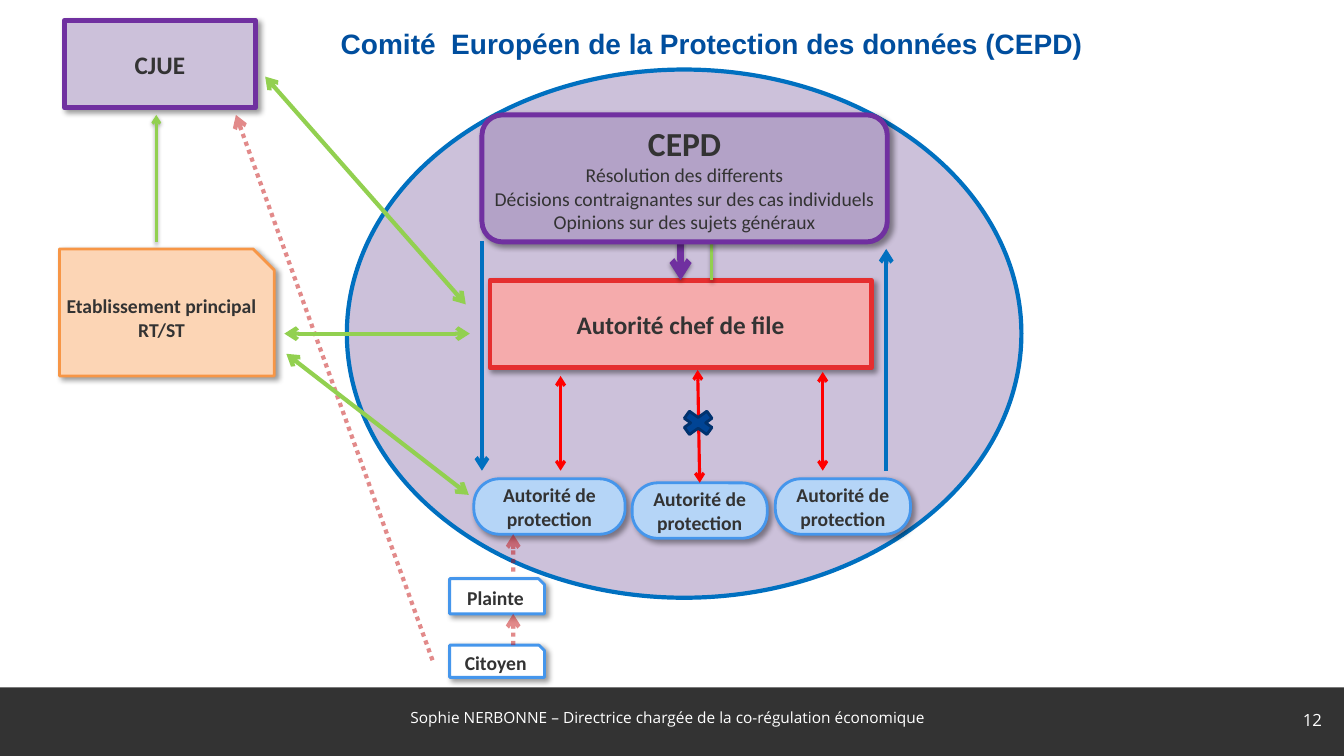
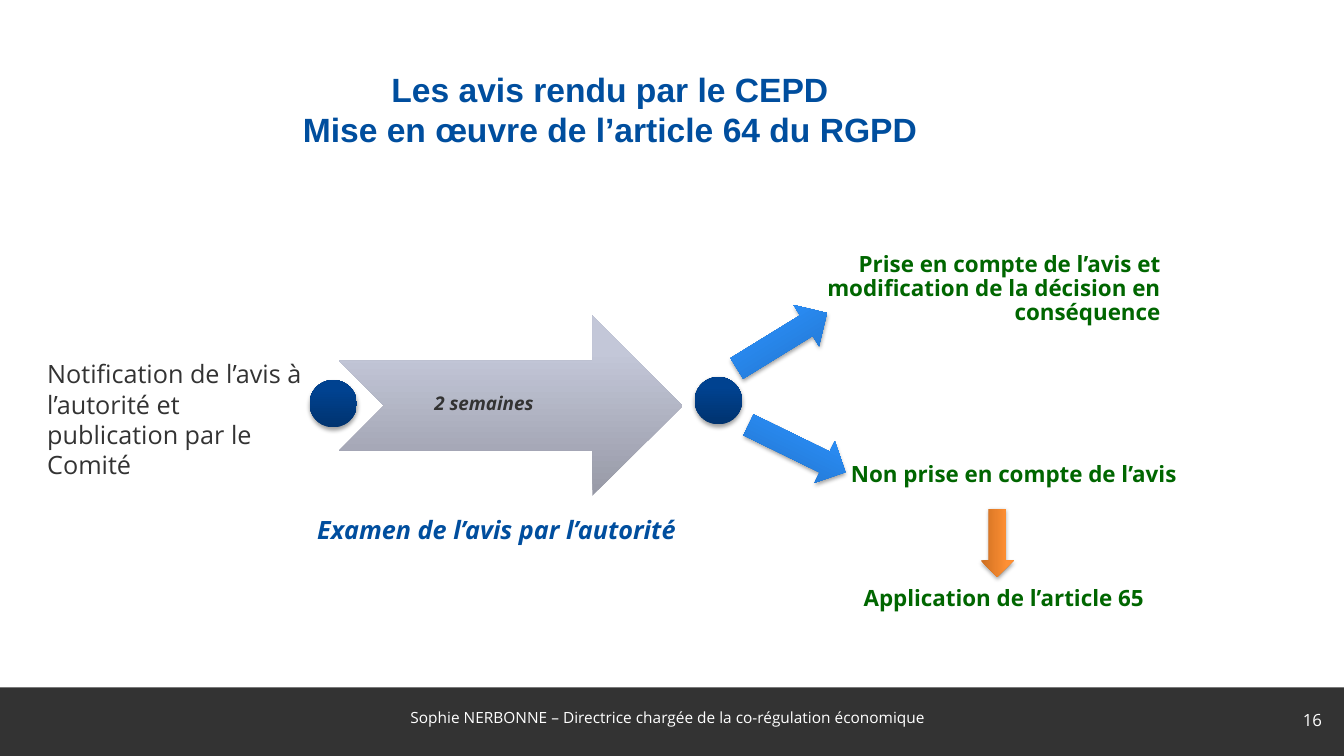
from lxml import etree
from pptx import Presentation
from pptx.dml.color import RGBColor
from pptx.enum.dml import MSO_LINE
from pptx.enum.shapes import MSO_CONNECTOR, MSO_SHAPE
from pptx.enum.text import MSO_ANCHOR, MSO_AUTO_SIZE, PP_ALIGN
from pptx.oxml.ns import qn
from pptx.util import Emu, Pt

PX = 9144  # one hundred px to the inch
LEFT, CENTER, RIGHT = PP_ALIGN.LEFT, PP_ALIGN.CENTER, PP_ALIGN.RIGHT
TOP, MIDDLE, BOTTOM = MSO_ANCHOR.TOP, MSO_ANCHOR.MIDDLE, MSO_ANCHOR.BOTTOM
RECTANGLE, ROUNDED = MSO_SHAPE.RECTANGLE, MSO_SHAPE.ROUNDED_RECTANGLE
SNIPPED, OVAL = MSO_SHAPE.SNIP_1_RECTANGLE, MSO_SHAPE.OVAL
CROSS = MSO_SHAPE.MATH_MULTIPLY
ARROW, NOTCHED_ARROW = MSO_SHAPE.RIGHT_ARROW, MSO_SHAPE.NOTCHED_RIGHT_ARROW
STRAIGHT, DOTS, NO_FIT = MSO_CONNECTOR.STRAIGHT, MSO_LINE.ROUND_DOT, MSO_AUTO_SIZE.NONE
TOP_SIDE = 0

COLORS = {
    "white": "FFFFFF", "dark": "333333", "title": "004E9E", "answer": "006600",
    "lilac": "CCC1DA", "mauve": "B3A2C7", "purple": "7030A0",
    "blue": "0070C0", "sky": "B5D5F7", "sky_line": "4596EC",
    "pink": "F5ABAC", "crimson": "E52E2F", "red": "FF0000", "brick": "C00000",
    "peach": "FCD5B5", "orange": "F79646", "green": "92D050",
    "navy": "004495", "navy_line": "00326E", "black": "000000",
}
GRADIENTS = {
    "grey": ("9799A6", "C3C7D8"), "navy": ("00336F", "004290"),
    "blue": ("216FC3", "2B91FD"), "orange": ("CC6E20", "FF9034"),
}
# opacity %, blur pt, distance pt, angle
BOX_SHADOW = (40, 4, 3, 45)
SOFT_SHADOW = (36, 3.1, 1.7, 90)

TITLE = {"name": "Arial", "size": 24, "bold": True, "color": "title"}
BOX = {"name": "Calibri", "size": 14, "bold": True, "color": "dark"}
BOX_LARGE = {**BOX, "size": 18}
BOX_HEAD = {**BOX, "size": 24}
BOX_DETAIL = {**BOX, "bold": False}
PLAIN = {"name": "Open Sans", "size": 18, "color": "dark"}
STEP = {**PLAIN, "bold": True, "italic": True, "color": "title"}
DURATION = {**STEP, "size": 13.5, "color": "dark"}
ANSWER = {**PLAIN, "size": 16, "bold": True, "color": "answer"}
FOOTER = {**PLAIN, "size": 11, "color": "white"}
NUMBER = {**FOOTER, "size": 12}

FOOTER_TEXT = "Sophie NERBONNE – Directrice chargée de la co-régulation économique"


def px(*values):
    return [Emu(value * PX) for value in values]


def rgb(name):
    return RGBColor.from_string(COLORS[name])


def set_font(font, style):
    for key, value in style.items():
        if key == "color":
            font.color.rgb = rgb(value)
        else:
            setattr(font, key, Pt(value) if key == "size" else value)


def write_text(shape, lines, align=CENTER, anchor=MIDDLE, inset=(10, 5), spacing=None):
    """Fill a shape with (text, style) pairs, one paragraph each."""
    frame = shape.text_frame
    horizontal, vertical = px(*inset)
    settings = {
        "word_wrap": True, "auto_size": NO_FIT, "vertical_anchor": anchor,
        "margin_left": horizontal, "margin_right": horizontal,
        "margin_top": vertical, "margin_bottom": vertical,
    }
    for key, value in settings.items():
        setattr(frame, key, value)
    for index, (text, style) in enumerate(lines):
        paragraph = frame.add_paragraph() if index else frame.paragraphs[0]
        paragraph.text = text
        paragraph.alignment = align
        paragraph.line_spacing = spacing
        for run in paragraph.runs:
            set_font(run.font, style)


def set_shadow(shape, shadow=None):
    """Replace the theme's shadow by the given one, or by none."""
    effects = etree.SubElement(shape.element.find(qn("p:spPr")), qn("a:effectLst"))
    if shadow:
        opacity, blur, distance, angle = shadow
        outer = etree.SubElement(
            effects, qn("a:outerShdw"), blurRad=str(int(Pt(blur))),
            dist=str(int(Pt(distance))), dir=str(angle * 60000), algn="ctr",
            rotWithShape="0")
        color = etree.SubElement(outer, qn("a:srgbClr"), val=COLORS["black"])
        etree.SubElement(color, qn("a:alpha"), val=str(opacity * 1000))


def add_block(slide, preset, box, fill, line=None, shadow=None, adjust=None):
    """Add a flat shape; line is (colour, points)."""
    shape = slide.shapes.add_shape(preset, *px(*box))
    if adjust is not None:
        shape.adjustments[0] = adjust
    shape.fill.solid()
    shape.fill.fore_color.rgb = rgb(fill)
    if line:
        color, width = line
        shape.line.color.rgb = rgb(color)
        shape.line.width = Pt(width)
    else:
        shape.line.fill.background()
    set_shadow(shape, shadow)
    return shape


def add_gradient(slide, preset, box, gradient, rotation=0, shadow=SOFT_SHADOW):
    shape = slide.shapes.add_shape(preset, *px(*box))
    shape.rotation = rotation
    shape.fill.gradient()
    shape.fill.gradient_angle = 90
    stops = zip(shape.fill.gradient_stops, GRADIENTS[gradient], (0, 0.8))
    for stop, color, position in stops:
        stop.color.rgb = RGBColor.from_string(color)
        stop.position = position
    shape.line.fill.background()
    set_shadow(shape, shadow)


def add_label(slide, box, text, style, **layout):
    write_text(slide.shapes.add_textbox(*px(*box)), [(text, style)], **layout)


def add_arrow(slide, ends, color, width, double=False, dotted=False, shadow=None,
              target=None):
    """Draw an arrow; with a target it is joined to the top of that shape."""
    connector = slide.shapes.add_connector(STRAIGHT, *px(*ends))
    if target is not None:
        connector.end_connect(target, TOP_SIDE)
    connector.line.color.rgb = rgb(color)
    connector.line.width = Pt(width)
    line = connector.element.find(".//" + qn("a:ln"))
    if dotted:
        connector.line.dash_style = DOTS
        etree.SubElement(line.find(".//" + qn("a:srgbClr")), qn("a:alpha"), val="46000")
    for end in ("a:headEnd", "a:tailEnd") if double else ("a:tailEnd",):
        etree.SubElement(line, qn(end), type="arrow")
    set_shadow(connector, shadow)


def add_slide(presentation, title, box, style, number):
    """Add a slide with its title, footer and number."""
    slide = presentation.slides.add_slide(presentation.slide_layouts[5])
    heading = slide.shapes.title
    heading.left, heading.top, heading.width, heading.height = px(*box)
    write_text(heading, [(title, style)])
    add_label(slide, (395, 692, 535, 40), FOOTER_TEXT, FOOTER)
    add_label(slide, (1266, 694, 55, 40), number, NUMBER, align=RIGHT)
    return slide


def add_band(slide):
    """Draw the dark footer band and move it to the layout the slides share."""
    band = add_block(slide, RECTANGLE, (0, 682, 1333, 68), "dark")
    slide.slide_layout.shapes.element.append(band.element)


def build_committee(presentation):
    slide = add_slide(presentation, "Comité  Européen de la Protection des données (CEPD)",
                      (253, 21, 906, 44), {**TITLE, "size": 20}, "12")

    def add_box(preset, box, fill, line, lines, adjust=None):
        shape = add_block(slide, preset, box, fill, line, BOX_SHADOW, adjust)
        write_text(shape, lines, inset=(4, 4))
        return shape

    add_block(slide, OVAL, (344, 69, 669, 524), "lilac", ("blue", 3))
    lead = add_box(ROUNDED, (486, 278, 378, 87), "pink", ("crimson", 3.5),
                   [("Autorité chef de file", BOX_LARGE)], 0)
    authorities = [
        add_box(ROUNDED, (left, top, width, 55), "sky", ("sky_line", 2),
                [("Autorité de protection", BOX)], 0.46)
        for left, top, width in ((470, 475, 150), (627, 479, 134), (769, 475, 134))]
    for text, top, height in (("Plainte", 574, 35), ("Citoyen", 640, 32)):
        add_box(SNIPPED, (446, top, 94, height), "white", ("sky_line", 2), [(text, BOX)])

    add_arrow(slide, (706, 278, 706, 215), "green", 2, shadow=SOFT_SHADOW)
    add_arrow(slide, (675, 215, 675, 278), "purple", 4.5, shadow=SOFT_SHADOW, target=lead)
    add_box(ROUNDED, (478, 114, 402, 126), "mauve", ("purple", 3.5), [
        ("CEPD", BOX_HEAD),
        ("Résolution des differents", BOX_DETAIL),
        ("Décisions contraignantes sur des cas individuels", BOX_DETAIL),
        ("Opinions sur des sujets généraux", BOX_DETAIL)], 0.16)
    add_box(ROUNDED, (64, 20, 189, 87), "lilac", ("purple", 3.5), [("CJUE", BOX_LARGE)], 0)
    add_box(SNIPPED, (59, 247, 213, 126), "peach", ("orange", 2),
            [("Etablissement principal", BOX), ("RT/ST", BOX)])

    for ends in ((429, 655, 234, 114), (509, 567, 509, 530), (509, 640, 509, 609)):
        add_arrow(slide, ends, "brick", 3, dotted=True)
    for ends, target in (((556, 373, 556, 467), None),
                         ((692, 367, 694, 479), authorities[1]),
                         ((816, 369, 816, 467), None)):
        add_arrow(slide, ends, "red", 2.25, double=True, target=target)
    for ends in ((879, 467, 879, 247), (478, 239, 478, 467)):
        add_arrow(slide, ends, "blue", 3)
    for ends in ((466, 331, 282, 331), (462, 302, 263, 76), (465, 491, 284, 351)):
        add_arrow(slide, ends, "green", 3, double=True)
    add_arrow(slide, (155, 240, 155, 114), "green", 2, shadow=SOFT_SHADOW)
    add_block(slide, CROSS, (671, 404, 43, 31), "navy", ("navy_line", 2), adjust=0.28)
    return slide


def build_opinions(presentation):
    slide = add_slide(presentation,
                      "Les avis rendu par le CEPD\vMise en œuvre de l’article 64 du RGPD",
                      (238, 54, 734, 109), TITLE, "16")
    add_gradient(slide, NOTCHED_ARROW, (336, 313, 341, 179), "grey", shadow=None)
    for left, top in ((307, 377), (689, 374)):
        add_gradient(slide, OVAL, (left, top, 47, 47), "navy")
    for box, gradient, rotation in (((723, 314, 105, 48), "blue", 328.4),
                                    ((737, 422, 107, 46), "blue", 26),
                                    ((955, 522, 68, 33), "orange", 90)):
        add_gradient(slide, ARROW, box, gradient, rotation)

    add_label(slide, (37, 351, 287, 101),
              "Notification de l’avis à l’autorité et publication par le Comité",
              PLAIN, align=LEFT, anchor=TOP)
    add_label(slide, (405, 384, 150, 33), "2 semaines", DURATION, anchor=TOP)
    add_label(slide, (281, 497, 423, 58), "Examen de l’avis par l’autorité", STEP,
              anchor=BOTTOM, inset=(14, 14), spacing=0.9)
    add_label(slide, (740, 239, 423, 189),
              "Prise en compte de l’avis et modification de la décision en conséquence",
              ANSWER, align=RIGHT, anchor=TOP, inset=(12, 12), spacing=0.9)
    add_label(slide, (807, 452, 397, 37), "Non prise en compte de l’avis", ANSWER, anchor=TOP)
    add_label(slide, (843, 575, 305, 37), "Application de l’article 65", ANSWER, anchor=TOP)


def main():
    presentation = Presentation()
    presentation.slide_width, presentation.slide_height = px(1333, 750)
    committee = build_committee(presentation)
    add_band(committee)
    build_opinions(presentation)
    presentation.save("out.pptx")


if __name__ == "__main__":
    main()
